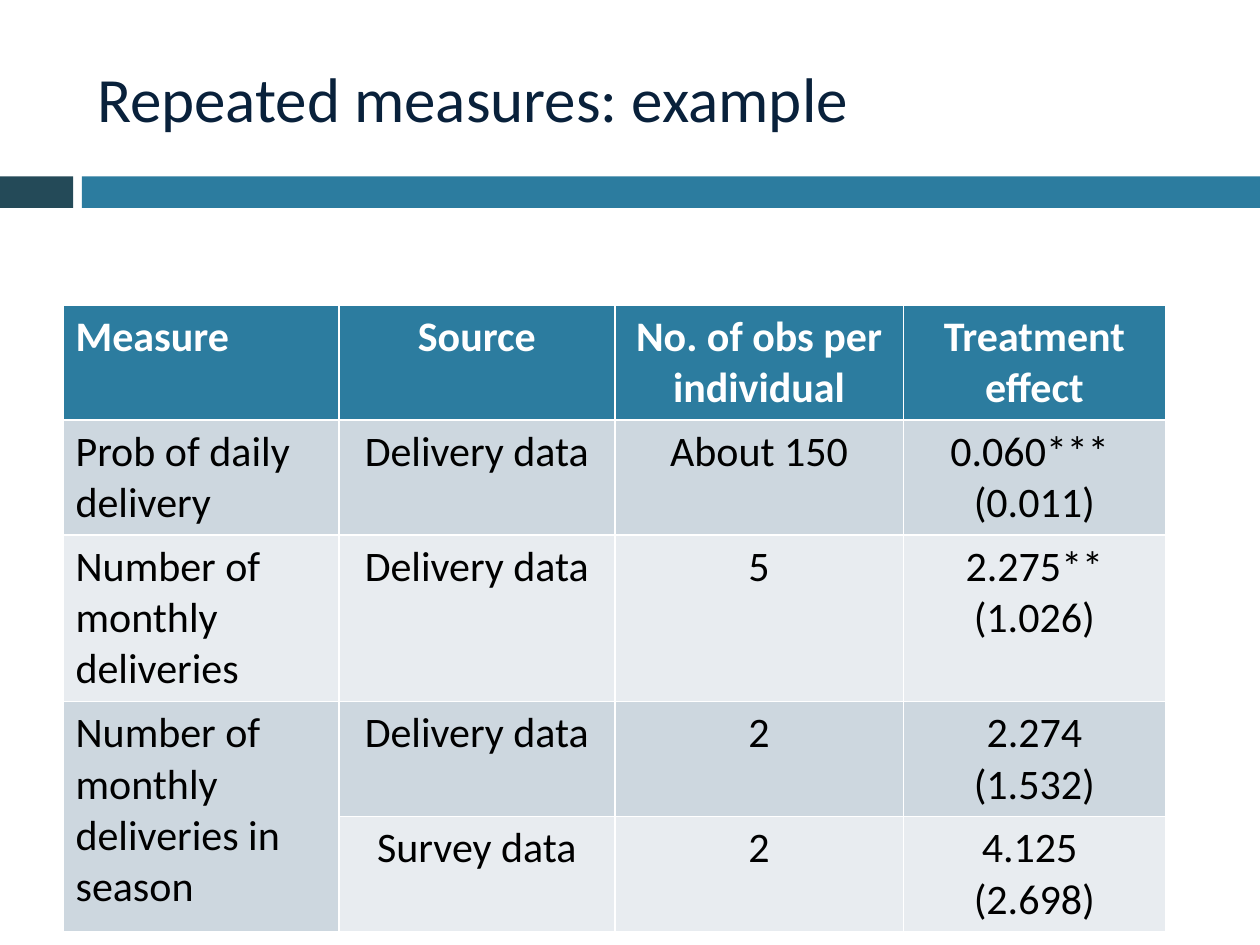
from pptx import Presentation
from pptx.dml.color import RGBColor
from pptx.enum.shapes import MSO_SHAPE
from pptx.enum.text import MSO_ANCHOR, PP_ALIGN
from pptx.util import Inches, Pt

RECTANGLE = MSO_SHAPE.RECTANGLE
MIDDLE = MSO_ANCHOR.MIDDLE
LEFT, CENTER = PP_ALIGN.LEFT, PP_ALIGN.CENTER

WIDTH, HEIGHT = 10, 7.5
BLUE, DARK_BLUE = "2C7C9F", "244A58"
BAND_FILLS = ["CDD7DF", "E8ECF0"]

TITLE = "Repeated measures: example"
# "\n" starts a paragraph, "\v" breaks a line; None continues the cell above.
ROWS = [
    ["Measure", "Source", "No. of obs per individual", "Treatment effect"],
    ["Prob of daily delivery", "Delivery data", "About 150", "0.060*** \n(0.011)"],
    ["Number of monthly deliveries", "Delivery data", "5", "2.275**\v(1.026)"],
    ["Number of monthly deliveries in season", "Delivery data", "2", "2.274\n(1.532)"],
    [None, "Survey data", "2", "4.125 \n(2.698)"],
]
COLUMN_WIDTHS = [2.19, 2.19, 2.29, 2.08]
ROW_HEIGHT = 0.41
TABLE_LEFT, TABLE_TOP = 0.5, 2.42

BAR_TOP, BAR_HEIGHT = 1.4, 0.25
BARS = [(0, 0.58, DARK_BLUE), (0.65, WIDTH - 0.65, BLUE)]  # left, width, fill

TITLE_FONT = {"name": "Calibri", "size": Pt(36), "bold": False}
HEADER_FONT = {"name": "Calibri", "size": Pt(24), "bold": True}
BODY_FONT = {**HEADER_FONT, "bold": False}


def rgb(hex_color):
    return RGBColor.from_string(hex_color)


def format_text(frame, font_values, color, align):
    for para in frame.paragraphs:
        para.alignment = align
        for span in para.runs:
            for name, value in font_values.items():
                setattr(span.font, name, value)
            span.font.color.rgb = rgb(color)


def add_title(page):
    title = page.shapes.title
    title.left, title.top, title.width, title.height = map(Inches, (0.67, 0.3, 8.83, 0.95))
    title.text_frame.text = TITLE
    title.text_frame.vertical_anchor = MIDDLE
    format_text(title.text_frame, TITLE_FONT, "09213B", LEFT)


def add_bars(page):
    for left, width, fill in BARS:
        bar = page.shapes.add_shape(
            RECTANGLE, *map(Inches, (left, BAR_TOP, width, BAR_HEIGHT)))
        bar.shadow.inherit = False
        bar.fill.solid()
        bar.fill.fore_color.rgb = rgb(fill)
        bar.line.fill.background()


def add_measures_table(page):
    frame = page.shapes.add_table(
        len(ROWS), len(COLUMN_WIDTHS),
        *map(Inches, (TABLE_LEFT, TABLE_TOP, sum(COLUMN_WIDTHS), ROW_HEIGHT * len(ROWS))))
    table = frame.table
    for column, width in zip(table.columns, COLUMN_WIDTHS):
        column.width = Inches(width)

    for r, row in enumerate(ROWS):
        is_header = r == 0
        fill = BLUE if is_header else BAND_FILLS[(r - 1) % 2]
        font, color = (HEADER_FONT, "FFFFFF") if is_header else (BODY_FONT, "000000")
        for c, text in enumerate(row):
            cell = table.cell(r, c)
            if text is None:
                table.cell(r - 1, c).merge(cell)
                continue
            cell.fill.solid()
            cell.fill.fore_color.rgb = rgb(fill)
            cell.text_frame.text = text
            format_text(cell.text_frame, font, color, CENTER if c else LEFT)


def main():
    deck = Presentation()
    deck.slide_width, deck.slide_height = Inches(WIDTH), Inches(HEIGHT)
    page = deck.slides.add_slide(deck.slide_layouts.get_by_name("Title Only"))
    add_bars(page)
    add_title(page)
    add_measures_table(page)
    deck.save("out.pptx")


if __name__ == "__main__":
    main()
